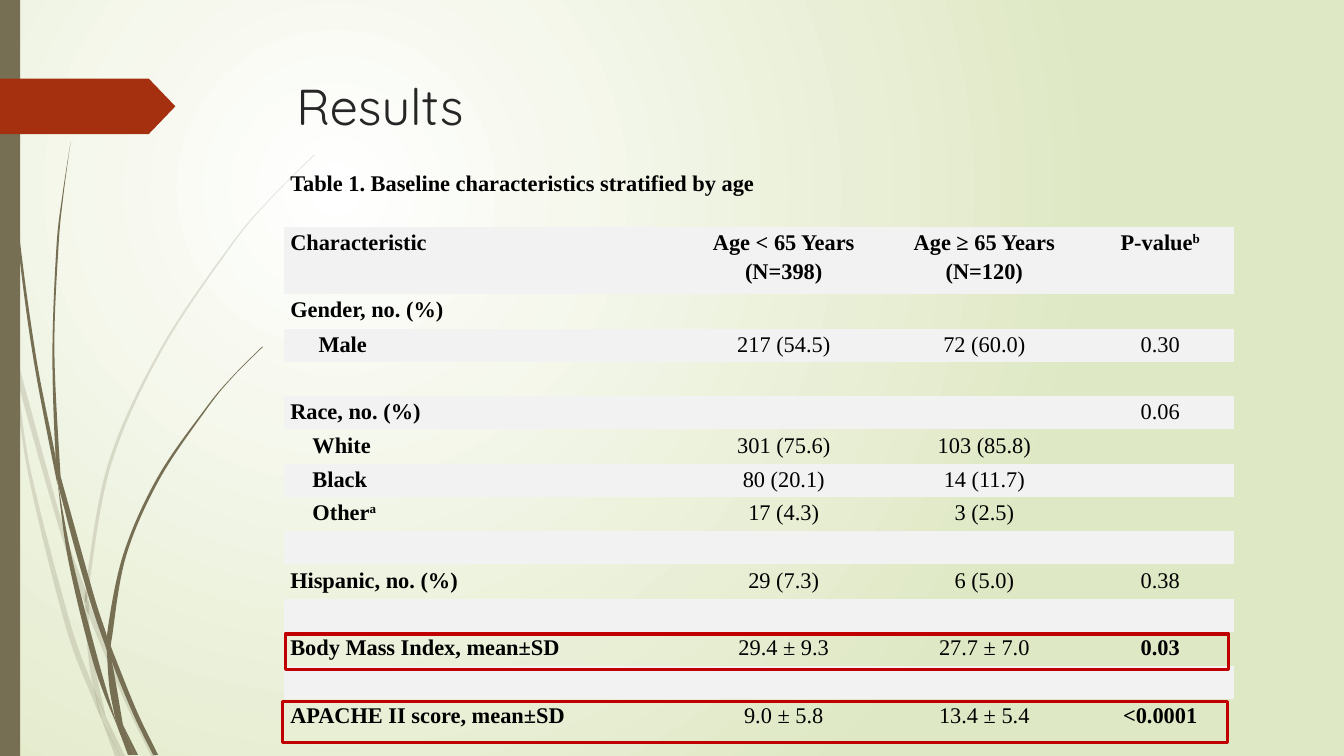
import lxml.etree
import pptx
import pptx.dml.color
import pptx.enum.shapes
import pptx.enum.text
import pptx.oxml.ns
import pptx.util

PX = 9144  # 100 px to the inch
COLORS = {
    "white": "FFFFFF", "pale green": "DFE8C4", "olive": "766F54", "rust": "A53010",
    "title": "262626", "text": "000000", "band": "F2F2F2", "highlight": "C00000",
}
NO_TABLE_STYLE = "{2D5ABB26-0587-4C30-8999-92F81FD0307C}"

# Each piece of grass: its left and right edge, from the top down
FAINT_GRASS = [
    ([(0, 282), (0, 299), (10, 344), (11, 350)], [(0, 282), (9, 322), (11, 350)]),
    ([(14, 345), (17, 376), (58, 522), (84, 599)], [(14, 345), (62, 520), (85, 586), (84, 599)]),
    ([(88, 596), (88, 610), (123, 694), (150, 750)], [(88, 596), (92, 607), (127, 692), (155, 750)]),
    ([(105, 711), (119, 750)], [(105, 711), (124, 750)]),
    ([(11, 350), (28, 470), (65, 621), (92, 693), (101, 714)],
     [(11, 350), (17, 376), (31, 469), (70, 619), (93, 683), (101, 714)]),
    ([(84, 599), (87, 646), (93, 683), (105, 711)], [(84, 599), (88, 610), (91, 646), (105, 711)]),
    ([(312, 153), (268, 197), (228, 244), (158, 348), (107, 461), (85, 584), (88, 596)],
     [(312, 154), (268, 198), (229, 245), (160, 349), (110, 462), (88, 584), (88, 596)]),
    ([(101, 714), (114, 750)], [(101, 714), (119, 750)]),
    ([(85, 586), (84, 599), (88, 610)], [(85, 586), (88, 596), (88, 610)]),
    ([(93, 683), (101, 714), (119, 750)], [(93, 683), (105, 711), (119, 750)]),
]
SOLID_GRASS = [
    ([(3, 0), (4, 48), (7, 110), (17, 233), (33, 355), (57, 481)],
     [(4, 0), (5, 48), (8, 109), (19, 232), (36, 355), (55, 453), (57, 481)]),
    ([(60, 472), (64, 505), (88, 592), (106, 645)], [(60, 472), (93, 590), (106, 631), (106, 645)]),
    ([(110, 641), (111, 656), (132, 708), (152, 749)], [(110, 641), (113, 649), (136, 706), (157, 749)]),
    ([(57, 477), (68, 557), (93, 659), (117, 722)], [(57, 477), (72, 556), (98, 657), (117, 722)]),
    ([(70, 141), (62, 193), (56, 245), (52, 349), (55, 449), (60, 472)],
     [(70, 141), (63, 193), (58, 245), (54, 349), (60, 472)]),
    ([(122, 719), (133, 749)], [(122, 719), (137, 749)]),
    ([(55, 449), (57, 477), (64, 505)], [(55, 449), (60, 472), (64, 505)]),
    ([(260, 344), (231, 373), (204, 405), (156, 474), (122, 551), (106, 631), (110, 641)],
     [(261, 344), (231, 374), (205, 406), (158, 476), (125, 552), (111, 633), (110, 641)]),
    ([(117, 722), (127, 749)], [(117, 722), (131, 749)]),
    ([(106, 645), (110, 691), (122, 719)], [(106, 645), (111, 656), (122, 719)]),
    ([(106, 631), (106, 645), (111, 656)], [(106, 631), (110, 641), (111, 656)]),
    ([(110, 691), (117, 722), (130, 749)], [(110, 691), (122, 719), (133, 749)]),
]

COLUMN_WIDTHS = [398, 195, 203, 146]
ROW_HEIGHTS = [59, 67] + [34, 33] * 6 + [34]
# A caret marks superscript; sub-rows are indented by INDENTS
ROWS = [
    ["Table 1. Baseline characteristics stratified by age"],
    ["Characteristic", "Age < 65 Years (N=398)", "Age ≥ 65 Years (N=120)", "P-value^b"],
    ["Gender, no. (%)"],
    ["Male", "217 (54.5)", "72 (60.0)", "0.30"],
    [],
    ["Race, no. (%)", "", "", "0.06"],
    ["White", "301 (75.6)", "103 (85.8)"],
    ["Black", "80 (20.1)", "14 (11.7)"],
    ["Other^a", "17 (4.3)", "3 (2.5)"],
    [],
    ["Hispanic, no. (%)", "29 (7.3)", "6 (5.0)", "0.38"],
    [],
    ["Body Mass Index, mean±SD", "29.4 ± 9.3", "27.7 ± 7.0", "0.03"],
    [],
    ["APACHE II score, mean±SD", "9.0 ± 5.8", "13.4 ± 5.4", "<0.0001"],
]
INDENTS = {"Male": 28, "White": 22, "Black": 22, "Other^a": 22}
SIGNIFICANT = {"0.03", "<0.0001"}


def px(*lengths):
    return [pptx.util.Emu(length * PX) for length in lengths]


def color(name):
    return pptx.dml.color.RGBColor.from_string(COLORS[name])


def fill_shape(shape, name):
    shape.shadow.inherit = False
    shape.fill.solid()
    shape.fill.fore_color.rgb = color(name)
    shape.line.fill.background()


def add_background(slide):
    fill = slide.background.fill
    fill.gradient()
    for stop, name in zip(fill.gradient_stops, ("white", "pale green")):
        stop.color.rgb = color(name)
    linear = slide.element.find(".//" + pptx.oxml.ns.qn("a:lin"))
    circle = lxml.etree.Element(pptx.oxml.ns.qn("a:path"), {"path": "circle"})
    lxml.etree.SubElement(circle, pptx.oxml.ns.qn("a:fillToRect"),
                          {"l": "50000", "t": "50000", "r": "100000", "b": "100000"})
    linear.getparent().replace(linear, circle)


def bend_edge(lines, knots, left, top):
    """Turn the lines that join the knots into one smooth curve."""
    padded = [knots[0], *knots, knots[-1]]
    for line, a, b, c, d in zip(lines, padded, padded[1:], padded[2:], padded[3:]):
        curve = lxml.etree.Element(pptx.oxml.ns.qn("a:cubicBezTo"))
        controls = ([q + (r - p) / 6 for p, q, r in zip(a, b, c)],
                    [q - (r - p) / 6 for p, q, r in zip(b, c, d)], c)
        for x, y in controls:
            lxml.etree.SubElement(curve, pptx.oxml.ns.qn("a:pt"), {
                "x": str(round((x - left) * PX)), "y": str(round((y - top) * PX))})
        line.getparent().replace(line, curve)


def add_grass(slide, pieces, opacity):
    for left_edge, right_edge in pieces:
        upward = right_edge[::-1]
        outline = left_edge + upward
        builder = slide.shapes.build_freeform(*px(*outline[0]), scale=1.0)
        builder.add_line_segments([px(*point) for point in outline[1:]], close=True)
        piece = builder.convert_to_shape()
        left, top = (min(values) for values in zip(*outline))
        lines = piece.element.findall(".//" + pptx.oxml.ns.qn("a:lnTo"))
        bend_edge(lines[:len(left_edge) - 1], left_edge, left, top)
        bend_edge(lines[len(left_edge):], upward, left, top)
        fill_shape(piece, "olive")
        if opacity < 100:
            rgb = piece.element.spPr.find(".//" + pptx.oxml.ns.qn("a:srgbClr"))
            lxml.etree.SubElement(rgb, pptx.oxml.ns.qn("a:alpha"), {"val": str(opacity * 1000)})


def add_side_decoration(slide, left, top, height):
    add_grass(slide, FAINT_GRASS, 20)
    add_grass(slide, SOLID_GRASS, 100)
    shapes = pptx.enum.shapes.MSO_SHAPE
    bar = slide.shapes.add_shape(shapes.RECTANGLE, *px(left, top, 20, height))
    fill_shape(bar, "olive")
    arrow = slide.shapes.add_shape(shapes.PENTAGON, *px(left, top + 78, 174, 55))
    arrow.adjustments[0] = 0.48
    fill_shape(arrow, "rust")


def add_title(slide, left, top, width, height):
    title = slide.shapes.title
    title.left, title.top, title.width, title.height = px(left, top, width, height)
    title.text_frame.text = "Results"
    title.text_frame.vertical_anchor = pptx.enum.text.MSO_ANCHOR.TOP
    paragraph = title.text_frame.paragraphs[0]
    paragraph.alignment = pptx.enum.text.PP_ALIGN.LEFT
    paragraph.font.name = "Quicksand"
    paragraph.font.size = pptx.util.Pt(36)
    paragraph.font.color.rgb = color("title")
    slide.shapes.element.append(title.element)  # in front of the decoration


def write_cell(cell, text, bold, centered):
    cell.margin_left, cell.margin_right, cell.margin_top, cell.margin_bottom = px(
        6 + INDENTS.get(text, 0), 6, 0, 0)
    paragraph = cell.text_frame.paragraphs[0]
    paragraph.font.size = pptx.util.Pt(16)
    if not text:
        return
    paragraph.font.name = "Times New Roman"
    paragraph.font.bold = bold
    paragraph.font.color.rgb = color("text")
    paragraph.line_spacing = 1.15
    if centered:
        paragraph.alignment = pptx.enum.text.PP_ALIGN.CENTER
    base, _, superscript = text.partition("^")
    paragraph.add_run().text = base
    if superscript:
        run = paragraph.add_run()
        run.text = superscript
        run.font._element.set("baseline", "30000")


def add_characteristics_table(slide, left, top):
    frame = slide.shapes.add_table(
        len(ROWS), len(COLUMN_WIDTHS), *px(left, top, sum(COLUMN_WIDTHS), sum(ROW_HEIGHTS)))
    table = frame.table
    table.first_row = table.horz_banding = False
    table._tbl.tblPr.find(pptx.oxml.ns.qn("a:tableStyleId")).text = NO_TABLE_STYLE
    for column, width in zip(table.columns, px(*COLUMN_WIDTHS)):
        column.width = width
    for row, height in zip(table.rows, px(*ROW_HEIGHTS)):
        row.height = height
    table.cell(0, 0).merge(table.cell(0, len(COLUMN_WIDTHS) - 1))

    for row_index, texts in enumerate(ROWS):
        for column_index in range(len(COLUMN_WIDTHS)):
            cell = table.cell(row_index, column_index)
            text = texts[column_index] if column_index < len(texts) else ""
            bold = row_index < 2 or column_index == 0 or text in SIGNIFICANT
            write_cell(cell, text, bold, centered=column_index > 0)
            if row_index % 2:
                cell.fill.solid()
                cell.fill.fore_color.rgb = color("band")
            else:
                cell.fill.background()


def add_highlight(slide, left, top, width, height):
    box = slide.shapes.add_shape(
        pptx.enum.shapes.MSO_SHAPE.RECTANGLE, *px(left, top, width, height))
    box.shadow.inherit = False
    box.fill.background()
    box.line.color.rgb = color("highlight")
    box.line.width = pptx.util.Pt(2.25)


def main():
    presentation = pptx.Presentation()
    presentation.slide_width = pptx.util.Emu(12192000)
    presentation.slide_height = pptx.util.Inches(7.5)
    slide = presentation.slides.add_slide(presentation.slide_layouts.get_by_name("Title Only"))
    add_background(slide)
    add_side_decoration(slide, 0, 0, 750)
    add_title(slide, 284, 69, 975, 140)
    add_characteristics_table(slide, 282, 166)
    add_highlight(slide, 283, 629, 936, 35)
    add_highlight(slide, 280, 696, 938, 41)
    presentation.save("out.pptx")


if __name__ == "__main__":
    main()
